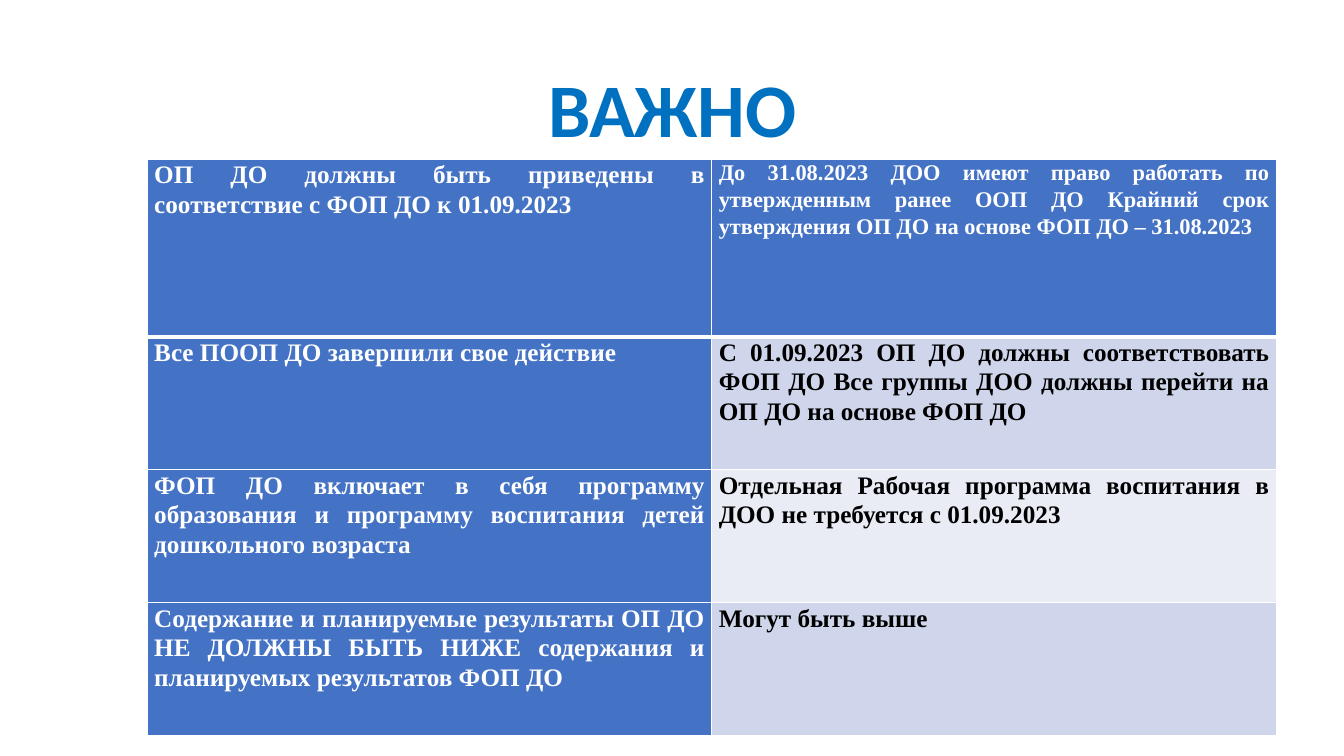
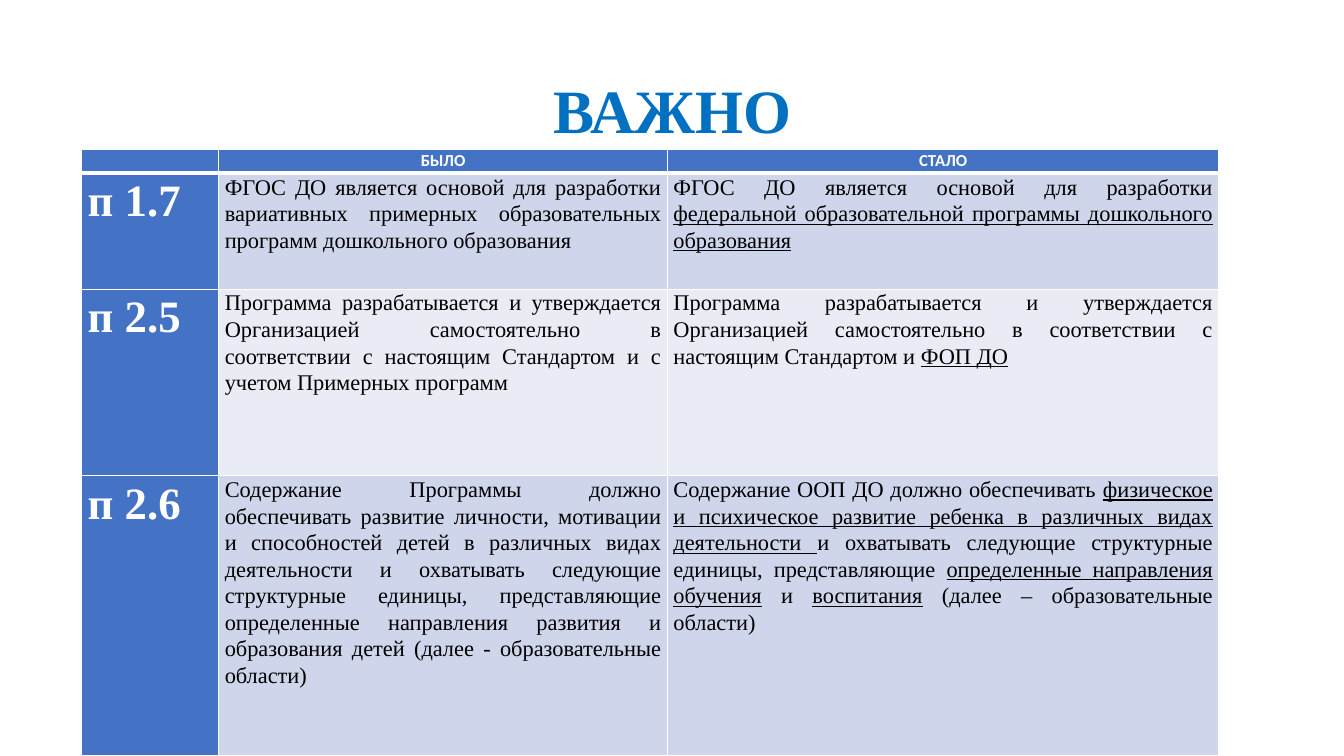
from lxml import etree
from pptx import Presentation
from pptx import util as u
from pptx.dml.color import RGBColor
from pptx.enum import text
from pptx.oxml import ns

SERIF, SANS = "Times New Roman", "Calibri"
TITLE_BLUE, HEAD_BLUE = "0070C0", "4472C4"
BANDS = ["CFD5EA", "E9EBF5"]
WHITE, BLACK = "FFFFFF", "000000"
CENTER, JUSTIFY = text.PP_ALIGN.CENTER, text.PP_ALIGN.JUSTIFY

# Each cell is a list of runs; every second run is underlined where allowed
RULES = [
    [["ОП ДО должны быть приведены в соответствие с ФОП ДО к 01.09.2023"],
     ["До 31.08.2023 ДОО имеют право работать по утвержденным ранее ООП ДО "
      "Крайний срок утверждения ОП ДО на основе ФОП ДО – 31.08.2023"]],
    [["Все ПООП ДО завершили свое действие"],
     ["С 01.09.2023 ОП ДО должны соответствовать ФОП ДО Все группы ДОО "
      "должны перейти на ОП ДО на основе ФОП ДО"]],
    [["ФОП ДО включает в себя программу образования и программу воспитания "
      "детей дошкольного возраста"],
     ["Отдельная Рабочая программа воспитания в ДОО не требуется с 01.09.2023"]],
    [["Содержание и планируемые результаты ОП ДО НЕ ДОЛЖНЫ БЫТЬ НИЖЕ "
      "содержания и планируемых результатов ФОП ДО"],
     ["Могут быть выше"]],
]
CHANGES = [
    [[], ["БЫЛО"], ["СТАЛО"]],
    [["п 1.7"],
     ["ФГОС ДО является основой для разработки вариативных примерных "
      "образовательных программ дошкольного образования"],
     ["ФГОС ДО является основой для разработки ",
      "федеральной образовательной программы дошкольного образования"]],
    [["п 2.5"],
     ["Программа разрабатывается и утверждается Организацией самостоятельно "
      "в соответствии с настоящим Стандартом и с учетом Примерных программ"],
     ["Программа разрабатывается и утверждается Организацией самостоятельно "
      "в соответствии с настоящим Стандартом и ", "ФОП ДО"]],
    [["п 2.6"],
     ["Содержание Программы должно обеспечивать развитие личности, мотивации "
      "и способностей детей в различных видах деятельности и охватывать "
      "следующие структурные единицы, представляющие определенные направления "
      "развития и образования детей (далее - образовательные области)"],
     ["Содержание ООП ДО должно обеспечивать ",
      "физическое и психическое развитие ребенка в различных видах деятельности ",
      "и охватывать следующие структурные единицы, представляющие ",
      "определенные направления обучения", " и ", "воспитания",
      " (далее – образовательные области)"]],
]


def color(value):
    return RGBColor.from_string(value)


def add_run(para, words, size, font, shade, bold, underline=False):
    span = para.add_run()
    span.text = words
    span.font.size = u.Pt(size)
    span.font.name = font
    span.font.color.rgb = color(shade)
    span.font.bold = bold
    span.font.underline = underline


def add_page(deck, title_size, title_font):
    """Title-only page with the shared blue heading."""
    page = deck.slides.add_slide(deck.slide_layouts[5])
    title = page.shapes.title
    title.left, title.top = u.Inches(0.92), u.Inches(0.4)
    title.width, title.height = u.Inches(11.5), u.Inches(1.45)
    title.text_frame.vertical_anchor = text.MSO_ANCHOR.MIDDLE
    para = title.text_frame.paragraphs[0]
    para.alignment, para.line_spacing = CENTER, 0.9
    add_run(para, "ВАЖНО", title_size, title_font, TITLE_BLUE, True)
    return page


def set_borders(cell, row):
    """White rules, with a heavy one under the first row."""
    widths = {"L": 1, "R": 1, "T": 3 if row == 1 else 1, "B": 3 if row == 0 else 1}
    properties = cell._tc.get_or_add_tcPr()
    for side, width in widths.items():
        line = etree.SubElement(properties, ns.qn(f"a:ln{side}"), w=str(u.Pt(width)))
        fill = etree.SubElement(line, ns.qn("a:solidFill"))
        etree.SubElement(fill, ns.qn("a:srgbClr"), val=WHITE)


def fill_cell(cell, runs, row, column, inset, style):
    is_head = row == 0 or column == 0
    set_borders(cell, row)
    cell.fill.solid()
    cell.fill.fore_color.rgb = color(HEAD_BLUE if is_head else BANDS[(row - 1) % 2])
    cell.margin_left = cell.margin_right = u.Inches(inset)
    cell.margin_top = cell.margin_bottom = 0
    size, font, bold, align = style(row, column)
    para = cell.text_frame.paragraphs[0]
    para.alignment, para.line_spacing = align, 1.07
    for index, words in enumerate(runs):
        add_run(para, words, size, font, WHITE if is_head else BLACK, bold, index % 2 == 1)
    if not runs:  # keeps an empty cell from stretching its row
        etree.SubElement(para._p, ns.qn("a:endParaRPr"), sz=str(size * 100))


def add_grid(page, left, top, widths, heights, rows, inset, style):
    """Table with blue first row and column and banded body."""
    frame = page.shapes.add_table(
        len(heights), len(widths), u.Inches(left), u.Inches(top),
        u.Inches(sum(widths)), u.Inches(sum(heights)))
    table = frame.table
    for column, width in zip(table.columns, widths):
        column.width = u.Inches(width)
    for line, height in zip(table.rows, heights):
        line.height = u.Inches(height)
    for row, cells in enumerate(rows):
        for column, runs in enumerate(cells):
            fill_cell(table.cell(row, column), runs, row, column, inset, style)


def rules_style(row, column):
    return (16 if (row, column) == (0, 1) else 18), SERIF, True, JUSTIFY


def changes_style(row, column):
    if row == 0:
        return 12, SANS, True, CENTER
    if column == 0:
        return 32, SERIF, True, JUSTIFY
    return 16, SERIF, False, JUSTIFY


def main():
    deck = Presentation()
    deck.slide_width, deck.slide_height = u.Inches(13.33), u.Inches(7.5)

    # Rules in force
    page = add_page(deck, 54, SANS)
    add_grid(page, 1.46, 1.58, [5.6] * 2, [1.76] + [1.32] * 3, RULES, 0.07, rules_style)

    # Before and after
    page = add_page(deck, 44, SERIF)
    add_grid(page, 0.81, 1.48, [1.36, 4.45, 5.47], [0.24, 1.15, 1.85, 2.78],
             CHANGES, 0.06, changes_style)

    deck.save("out.pptx")


if __name__ == "__main__":
    main()
